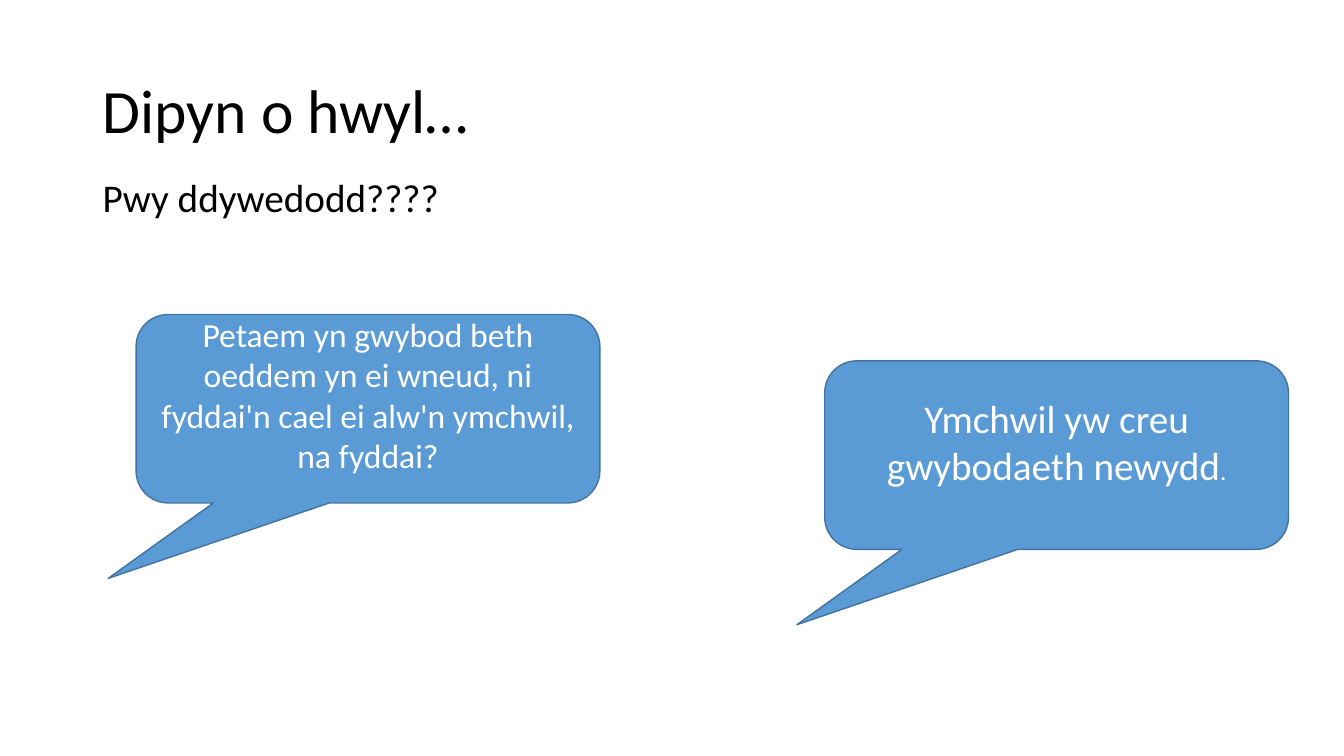
from pptx import Presentation
from pptx.dml.color import RGBColor
from pptx.enum import shapes, text
from pptx.util import Inches, Pt


def colour(value):
    return RGBColor.from_string(value)


def style(paragraph, size, hex_colour, align):
    paragraph.font.name = "Calibri"
    paragraph.font.size = Pt(size)
    paragraph.font.color.rgb = colour(hex_colour)
    paragraph.alignment = align


deck = Presentation()
deck.slide_width, deck.slide_height = Inches(13.33), Inches(7.5)
page = deck.slides.add_slide(deck.slide_layouts[5])

title = page.shapes.title
title.left, title.top = Inches(0.92), Inches(0.4)
title.width, title.height = Inches(11.5), Inches(1.45)
title.text_frame.text = "Dipyn o hwyl…"
title.text_frame.vertical_anchor = text.MSO_ANCHOR.MIDDLE
heading = title.text_frame.paragraphs[0]
heading.line_spacing = 0.9
style(heading, 44, "000000", text.PP_ALIGN.LEFT)

question = page.shapes.add_textbox(Inches(0.92), Inches(1.67), Inches(11.45), Inches(0.57))
question.text_frame.word_wrap = True
question.text_frame.text = "Pwy ddywedodd????"
style(question.text_frame.paragraphs[0], 28, "000000", text.PP_ALIGN.LEFT)

# Left, top, text size, then the quotation and its smaller full stop
quotes = [
    (1.35, 3.12, 24, "Petaem yn gwybod beth oeddem yn ei wneud, ni fyddai'n cael ei alw'n ymchwil, na fyddai?", ""),
    (8.18, 3.58, 28, "Ymchwil yw creu gwybodaeth newydd", "."),
]
for left, top, size, quote, stop in quotes:
    bubble = page.shapes.add_shape(
        shapes.MSO_SHAPE.ROUNDED_RECTANGULAR_CALLOUT,
        Inches(left), Inches(top), Inches(4.6), Inches(1.87))
    for index, value in enumerate((-0.56, 0.9, 0.17)):
        bubble.adjustments[index] = value
    bubble.shadow.inherit = False
    bubble.fill.solid()
    bubble.fill.fore_color.rgb = colour("5B9BD5")
    bubble.line.color.rgb = colour("43739E")
    bubble.line.width = Pt(1)

    frame = bubble.text_frame
    frame.word_wrap = True
    frame.vertical_anchor = text.MSO_ANCHOR.MIDDLE
    frame.margin_top, frame.margin_bottom = Inches(0), Inches(0.28)
    para = frame.paragraphs[0]
    para.add_run().text = quote
    style(para, size, "FFFFFF", text.PP_ALIGN.CENTER)
    if stop:
        span = para.add_run()
        span.text = stop
        span.font.size = Pt(18)

deck.save("out.pptx")
